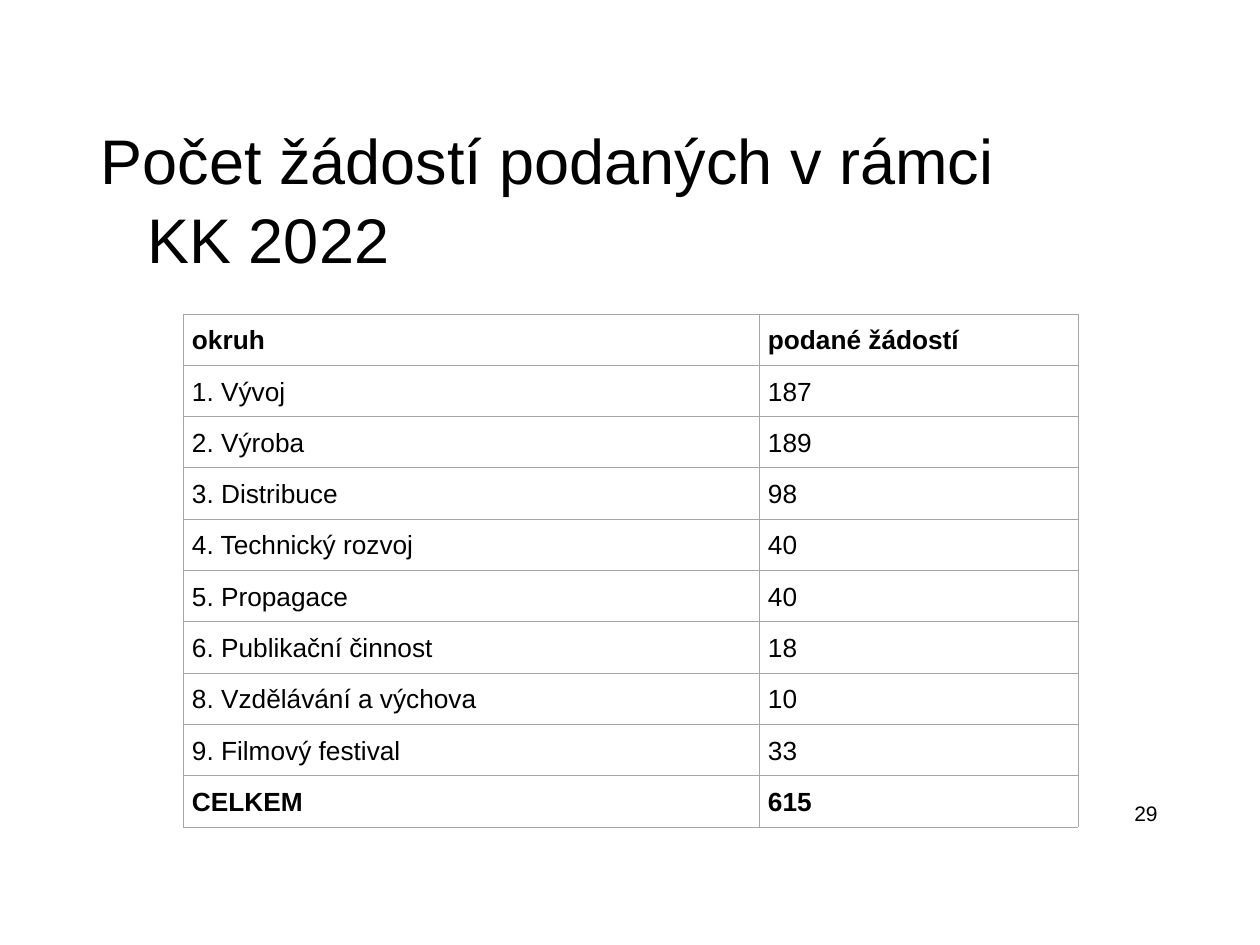
from lxml import etree
from pptx import Presentation
from pptx.dml.color import RGBColor
from pptx.enum.text import MSO_ANCHOR, MSO_AUTO_SIZE, PP_ALIGN
from pptx.oxml.ns import qn
from pptx.util import Emu, Pt

TOP, MIDDLE = MSO_ANCHOR.TOP, MSO_ANCHOR.MIDDLE
LEFT, RIGHT = PP_ALIGN.LEFT, PP_ALIGN.RIGHT
NO_FIT = MSO_AUTO_SIZE.NONE
FONT = "Arial"
COLORS = {"text": "000000", "border": "A6A6A6"}
TITLE_ONLY = 5
ROWS = [
    ("okruh", "podané žádostí"),
    ("1. Vývoj", "187"),
    ("2. Výroba", "189"),
    ("3. Distribuce", "98"),
    ("4. Technický rozvoj", "40"),
    ("5. Propagace", "40"),
    ("6. Publikační činnost", "18"),
    ("8. Vzdělávání a výchova", "10"),
    ("9. Filmový festival", "33"),
    ("CELKEM", "615"),
]


def px(n):
    return Emu(round(n * 914400 / 126))


class SlideBuilder:
    """Holds the text style and the current slide, and adds its elements."""

    def __init__(self, prs):
        self.slide = prs.slides.add_slide(prs.slide_layouts[TITLE_ONLY])

    def set_text(self, p, text, size, bold=False, align=LEFT):
        p.text = text
        p.alignment = align
        p.font.name = FONT
        p.font.size = Pt(size)
        p.font.bold = bold
        p.font.color.rgb = RGBColor.from_string(COLORS["text"])

    def title(self, text, x, y, w, h, hang):
        sp = self.slide.shapes.title
        sp.left, sp.top, sp.width, sp.height = map(px, (x, y, w, h))
        tf = sp.text_frame
        tf.word_wrap = True
        tf.auto_size = NO_FIT
        tf.vertical_anchor = TOP
        p = tf.paragraphs[0]
        self.set_text(p, text, 36)
        p.line_spacing = 1.05
        p.space_after = Pt(18)
        pPr = p._p.get_or_add_pPr()
        pPr.set("marL", str(px(hang)))
        pPr.set("indent", str(-px(hang)))

    def page_number(self, text, x, y, w, h):
        sp = self.slide.shapes.add_textbox(*map(px, (x, y, w, h)))
        tf = sp.text_frame
        tf.word_wrap = True
        tf.vertical_anchor = MIDDLE
        self.set_text(tf.paragraphs[0], text, 12, align=RIGHT)

    def border(self, cell):
        tcPr = cell._tc.get_or_add_tcPr()
        for side in ("a:lnL", "a:lnR", "a:lnT", "a:lnB"):
            ln = etree.SubElement(tcPr, qn(side), w=str(Pt(0.5)))
            fill = etree.SubElement(ln, qn("a:solidFill"))
            etree.SubElement(fill, qn("a:srgbClr"), val=COLORS["border"])

    def table(self, rows, x, y, widths, h):
        frame = self.slide.shapes.add_table(
            len(rows), len(widths), *map(px, (x, y, sum(widths), h)))
        table = frame.table
        table.first_row = table.horz_banding = False
        for column, width in zip(table.columns, widths):
            column.width = px(width)
        for i, row in enumerate(rows):
            for j, text in enumerate(row):
                cell = table.cell(i, j)
                self.border(cell)
                cell.fill.background()
                cell.vertical_anchor = MIDDLE
                cell.margin_left = cell.margin_right = px(9)
                cell.margin_top = cell.margin_bottom = 0
                p = cell.text_frame.paragraphs[0]
                self.set_text(p, text, 15, bold=i in (0, len(rows) - 1))
                p.line_spacing = 1.07


def main():
    prs = Presentation()
    prs.slide_width, prs.slide_height = px(1260), px(945)
    s = SlideBuilder(prs)
    s.title("Počet žádostí podaných v rámci KK 2022", 88, 111, 939, 736, 47)
    s.page_number("29", 876, 788, 294, 50)
    s.table(ROWS, 183, 314, (576, 319), 513)
    prs.save("out.pptx")


if __name__ == "__main__":
    main()
